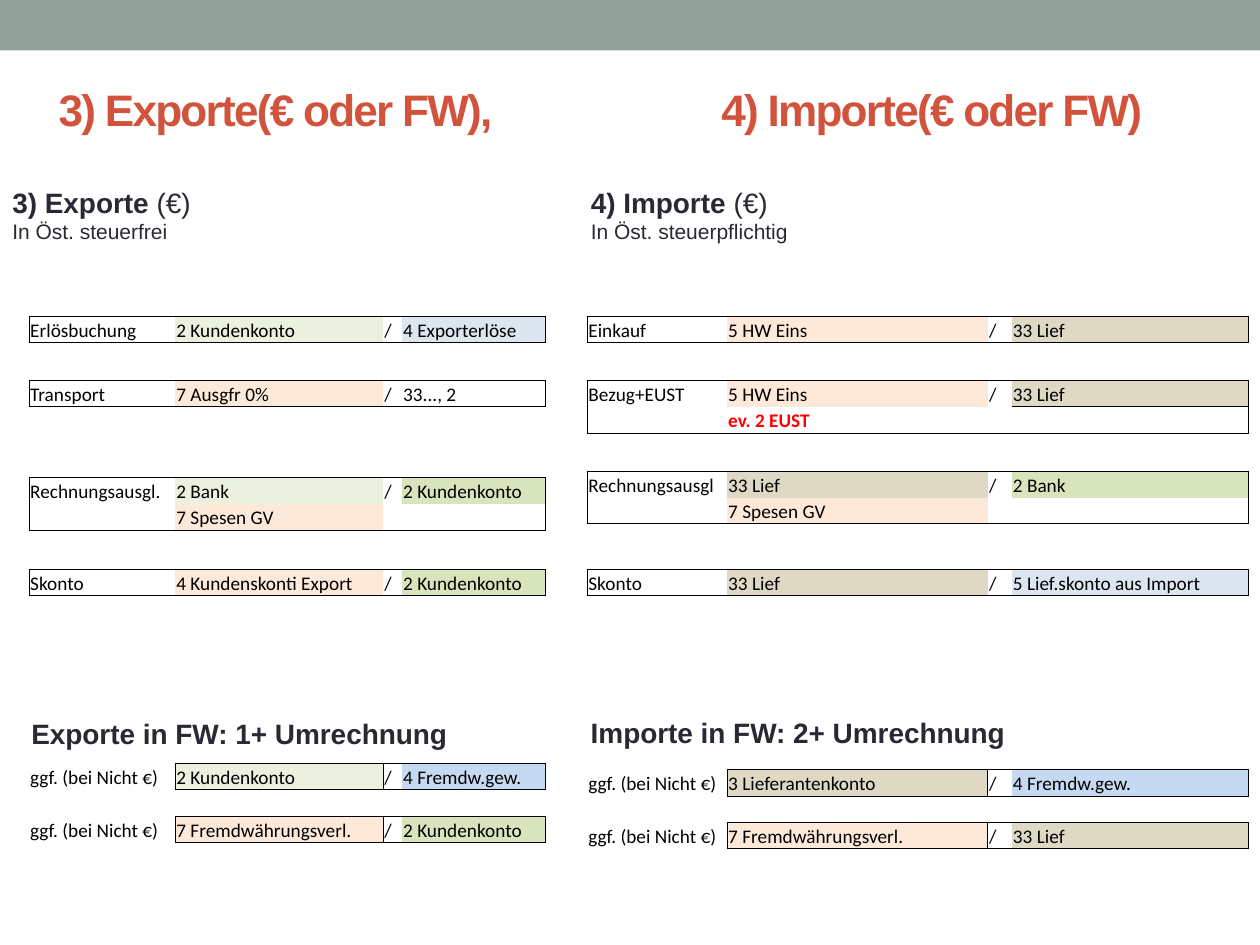
from dataclasses import dataclass

from lxml.etree import SubElement
from pptx import Presentation
from pptx.dml.color import RGBColor
from pptx.enum.shapes import MSO_AUTO_SHAPE_TYPE as Preset
from pptx.enum.text import MSO_ANCHOR as Anchor, MSO_AUTO_SIZE as AutoSize
from pptx.oxml.ns import qn
from pptx.util import Inches, Pt

WIDTH, HEIGHT = 10, 7.5
ROW = 2.78  # row height, percent of the slide height
SLASH = 2  # column between debit and credit
PLAIN_TABLE = "{2D5ABB26-0587-4C30-8999-92F81FD0307C}"


@dataclass(frozen=True)
class Theme:
    heading_font: str = "Arial"
    table_font: str = "Calibri"
    title_size: float = 25.2
    heading_size: float = 16
    note_size: float = 12
    table_size: float = 11
    band: str = "93A299"
    title: str = "D2533C"
    ink: str = "292934"
    black: str = "000000"
    alert: str = "FF0000"
    mint: str = "EBF1DE"
    green: str = "D8E4BC"
    peach: str = "FDE9D9"
    sand: str = "DDD9C4"
    ice: str = "DCE6F1"
    blue: str = "C5D9F1"


THEME = Theme()


@dataclass(frozen=True)
class Side:
    """One half of the slide: table edge and column widths in percent."""
    left: float
    columns: tuple


EXPORTS = Side(2.3, (11.6, 16.5, 1.5, 11.4))
IMPORTS = Side(46.6, (11.1, 20.7, 1.9, 18.8))
GAP = ("", "", None, "", None)
FOREIGN = "ggf. (bei Nicht €)"


def across(percent):
    return Inches(WIDTH * percent / 100)


def down(percent):
    return Inches(HEIGHT * percent / 100)


def style(span, font, size, color, bold=False):
    span.font.name = font
    span.font.size = Pt(size)
    span.font.bold = bold
    span.font.color.rgb = RGBColor.from_string(color)


def add_band(page):
    band = page.shapes.add_shape(Preset.RECTANGLE, 0, 0, across(100), Inches(0.4))
    band.shadow.inherit = False
    band.fill.solid()
    band.fill.fore_color.rgb = RGBColor.from_string(THEME.band)
    band.line.fill.background()


def add_title(page, left_title, right_title):
    """One line whose second half starts at a tab stop."""
    box = page.shapes.add_textbox(across(0.9), down(6.67), across(93.8), down(9.6))
    frame = box.text_frame
    frame.word_wrap = True
    frame.vertical_anchor = Anchor.MIDDLE
    frame.margin_left = across(3.75)
    para = frame.paragraphs[0]
    para.text = f"{left_title}\t{right_title}"
    tabs = SubElement(para._p.get_or_add_pPr(), qn("a:tabLst"))
    SubElement(tabs, qn("a:tab"), pos=str(across(52.6)), algn="l")
    for span in para.runs:
        style(span, THEME.heading_font, THEME.title_size, THEME.title, True)
        span.font._element.set("spc", "-100")


def add_heading(page, left, top, width, heading, suffix="", note=""):
    height = 7.6 if note else 4.93
    box = page.shapes.add_textbox(across(left), down(top), across(width), down(height))
    frame = box.text_frame
    frame.word_wrap = False
    frame.auto_size = AutoSize.SHAPE_TO_FIT_TEXT
    para = frame.paragraphs[0]
    para.text = heading
    style(para.runs[0], THEME.heading_font, THEME.heading_size, THEME.ink, True)
    if suffix:
        span = para.add_run()
        span.text = suffix
        style(span, THEME.heading_font, THEME.heading_size, THEME.ink)
    if note:
        para = frame.add_paragraph()
        para.text = note
        style(para.runs[0], THEME.heading_font, THEME.note_size, THEME.ink)


def fill_cell(cell, text, fill, alert):
    cell.vertical_anchor = Anchor.BOTTOM
    cell.margin_left = cell.margin_right = cell.margin_top = Inches(0.01)
    cell.margin_bottom = 0
    if fill:
        cell.fill.solid()
        cell.fill.fore_color.rgb = RGBColor.from_string(fill)
    else:
        cell.fill.background()
    para = cell.text_frame.paragraphs[0]
    if text:
        para.text = text
        color = THEME.alert if alert else THEME.black
        style(para.runs[0], THEME.table_font, THEME.table_size, color, alert)
    else:
        SubElement(para._p, qn("a:endParaRPr"), sz=str(int(THEME.table_size * 100)))


def draw_borders(cell, sides):
    props = cell._tc.get_or_add_tcPr()
    for place, side in enumerate(side for side in "LRTB" if side in sides):
        line = SubElement(props, qn(f"a:ln{side}"), w=str(Pt(0.5)))
        paint = SubElement(line, qn("a:solidFill"))
        SubElement(paint, qn("a:srgbClr"), val=THEME.black)
        props.insert(place, line)


def frame_sides(row, column, frames):
    """Sides of a cell lying on a frame (first row, last row, first column)."""
    sides = set()
    for first, last, start in frames:
        if first <= row <= last and column >= start:
            edges = {"L": column == start, "R": column == SLASH + 1,
                     "T": row == first, "B": row == last}
            sides |= {side for side, on_edge in edges.items() if on_edge}
    return sides


def add_entry(page, side, top, entries, frames=None, underlined=(), alerts=()):
    """Booking table; each entry is label, debit and fill, credit and fill."""
    frames = frames or [(0, len(entries) - 1, 0)]
    shape = page.shapes.add_table(
        len(entries), len(side.columns), across(side.left), down(top),
        across(sum(side.columns)), down(ROW * len(entries)))
    table = shape.table
    table.first_row = table.horz_banding = False
    table._tbl.tblPr.find(qn("a:tableStyleId")).text = PLAIN_TABLE
    for column, width in zip(table.columns, side.columns):
        column.width = across(width)
    for r, (label, debit, debit_fill, credit, credit_fill) in enumerate(entries):
        table.rows[r].height = down(ROW)
        texts = (label, debit, "/" if credit else "", credit)
        fills = (None, debit_fill, None, credit_fill)
        for c, (text, fill) in enumerate(zip(texts, fills)):
            cell = table.cell(r, c)
            fill_cell(cell, text, fill, text in alerts)
            sides = frame_sides(r, c, frames)
            draw_borders(cell, sides | {"T"} if (r - 1, c) in underlined else sides)


def add_foreign_entry(page, side, top, gain, loss):
    add_entry(page, side, top, [(FOREIGN, *gain), GAP, (FOREIGN, *loss)],
              frames=[(0, 0, 1), (2, 2, 1)])


def add_exports(page):
    t = THEME
    customer = ("2 Kundenkonto", t.green)
    add_heading(page, 0, 18.93, 16.4, "3) Exporte ", "(€)", "In Öst. steuerfrei")
    add_entry(page, EXPORTS, 33.5,
              [("Erlösbuchung", "2 Kundenkonto", t.mint, "4 Exporterlöse", t.ice)])
    add_entry(page, EXPORTS, 40.27, [("Transport", "7 Ausgfr 0%", t.peach, "33..., 2", None)])
    add_entry(page, EXPORTS, 50.53, [("Rechnungsausgl.", "2 Bank", t.mint, *customer),
                                     ("", "7 Spesen GV", t.peach, "", None)])
    add_entry(page, EXPORTS, 60.27, [("Skonto", "4 Kundenskonti Export", t.peach, *customer)])
    add_heading(page, 1.5, 75.2, 35.5, "Exporte in FW: 1+ Umrechnung")
    add_foreign_entry(page, EXPORTS, 80.8,
                      ("2 Kundenkonto", t.mint, "4 Fremdw.gew.", t.blue),
                      ("7 Fremdwährungsverl.", t.peach, *customer))


def add_imports(page):
    t = THEME
    supplier = ("33 Lief", t.sand)
    goods = ("5 HW Eins", t.peach)
    add_heading(page, 45.9, 18.93, 17.8, "4) Importe ", "(€)", "In Öst. steuerpflichtig")
    add_entry(page, IMPORTS, 33.5, [("Einkauf", *goods, *supplier)])
    add_entry(page, IMPORTS, 40.27,
              [("Bezug+EUST", *goods, *supplier), ("", "ev. 2 EUST", None, "", None)],
              underlined=[(0, 3)], alerts=["ev. 2 EUST"])
    add_entry(page, IMPORTS, 49.87, [("Rechnungsausgl", *supplier, "2 Bank", t.green),
                                     ("", "7 Spesen GV", t.peach, "", None)])
    add_entry(page, IMPORTS, 60.27,
              [("Skonto", *supplier, "5 Lief.skonto aus Import", t.ice)])
    add_heading(page, 45.9, 75.07, 35.3, "Importe in FW: 2+ Umrechnung")
    add_foreign_entry(page, IMPORTS, 81.47,
                      ("3 Lieferantenkonto", t.sand, "4 Fremdw.gew.", t.blue),
                      ("7 Fremdwährungsverl.", t.peach, *supplier))


def main():
    deck = Presentation()
    deck.slide_width, deck.slide_height = Inches(WIDTH), Inches(HEIGHT)
    page = deck.slides.add_slide(deck.slide_layouts[6])
    add_band(page)
    add_title(page, "3) Exporte(€ oder FW),", "4) Importe(€ oder FW)")
    add_exports(page)
    add_imports(page)
    deck.save("out.pptx")


if __name__ == "__main__":
    main()
